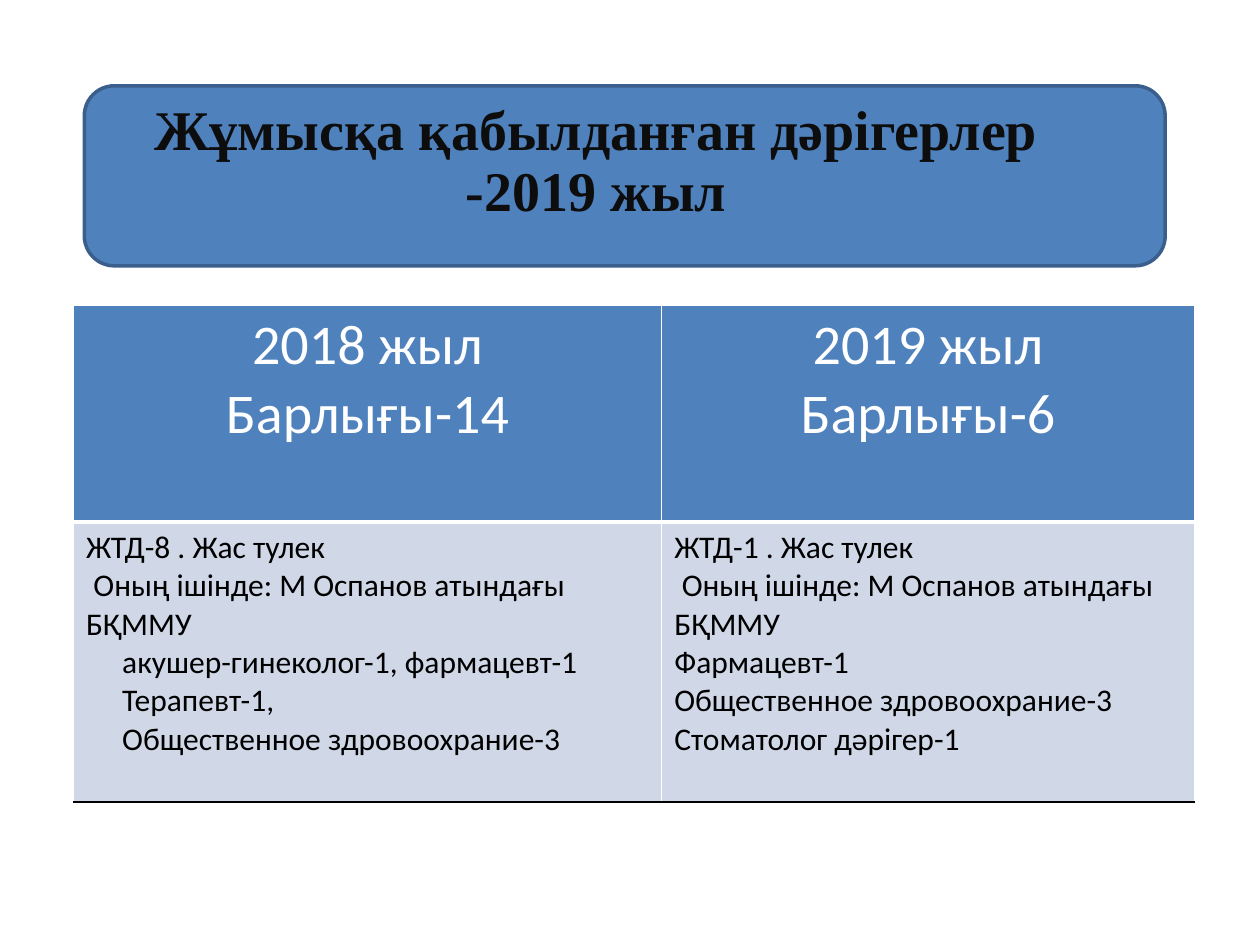
from lxml import etree
from pptx import Presentation
from pptx.dml.color import RGBColor
from pptx.enum.shapes import MSO_SHAPE
from pptx.enum.text import MSO_ANCHOR, MSO_AUTO_SIZE, PP_ALIGN
from pptx.oxml.ns import qn
from pptx.util import Cm, Pt

BLUE = RGBColor(0x4F, 0x81, 0xBD)
DARK_BLUE = RGBColor(0x3A, 0x5F, 0x8C)
PALE_BLUE = RGBColor(0xD0, 0xD8, 0xE8)
WHITE = RGBColor(0xFF, 0xFF, 0xFF)
BLACK = RGBColor(0x00, 0x00, 0x00)
NEAR_BLACK = RGBColor(0x0D, 0x0D, 0x0D)


def add_border(cell, side, color, points):
    line = etree.SubElement(cell._tc.get_or_add_tcPr(), qn(f"a:{side}"), w=str(Pt(points)))
    fill = etree.SubElement(line, qn("a:solidFill"))
    etree.SubElement(fill, qn("a:srgbClr"), val=str(color))


def add_line(frame, index, text, size, color, font="Calibri"):
    para = frame.paragraphs[0] if index == 0 else frame.add_paragraph()
    span = para.add_run()
    span.text = text
    span.font.size = Pt(size)
    span.font.name = font
    span.font.color.rgb = color
    return para


deck = Presentation()
deck.slide_width, deck.slide_height = Cm(25.4), Cm(19.05)
page = deck.slides.add_slide(deck.slide_layouts[5])

# Table of hired doctors: each line is (text, first-line indent in cm)
headers = [["2018 жыл", "Барлығы-14"], ["2019 жыл", "Барлығы-6"]]
shared_line = ("Оның ішінде: М Оспанов атындағы БҚММУ", 0.15)
details = [
    [("ЖТД-8 . Жас тулек", 0), shared_line,
     ("акушер-гинеколог-1, фармацевт-1", 0.73),
     ("Терапевт-1,", 0.73),
     ("Общественное здровоохрание-3", 0.73)],
    [("ЖТД-1 . Жас тулек", 0), shared_line,
     ("Фармацевт-1", 0),
     ("Общественное здровоохрание-3", 0),
     ("Стоматолог дәрігер-1", 0)],
]
table = page.shapes.add_table(2, 2, Cm(1.48), Cm(6.15), Cm(22.6), Cm(10.02)).table
table.first_row = table.horz_banding = False
table.columns[0].width, table.columns[1].width = Cm(11.86), Cm(10.74)
table.rows[0].height, table.rows[1].height = Cm(4.37), Cm(5.65)

for column in range(2):
    header, detail = table.cell(0, column), table.cell(1, column)
    for index, text in enumerate(headers[column]):
        para = add_line(header.text_frame, index, text, 32, WHITE)
        para.alignment = PP_ALIGN.CENTER
    for index, (text, indent) in enumerate(details[column]):
        para = add_line(detail.text_frame, index, text, 18, BLACK)
        if indent:
            properties = para._p.get_or_add_pPr()
            properties.set("marL", "0")
            properties.set("indent", str(Cm(indent)))

    # Borders come before the fill in the cell properties
    for cell, fill, top, bottom in (
        (header, BLUE, (WHITE, 1), (WHITE, 3)),
        (detail, PALE_BLUE, (WHITE, 3), (BLACK, 1)),
    ):
        add_border(cell, "lnL", WHITE, 1)
        add_border(cell, "lnR", WHITE, 1)
        add_border(cell, "lnT", *top)
        add_border(cell, "lnB", *bottom)
        cell.fill.solid()
        cell.fill.fore_color.rgb = fill

# Title banner
banner = page.shapes.add_shape(
    MSO_SHAPE.ROUNDED_RECTANGLE, Cm(1.7), Cm(1.73), Cm(21.79), Cm(3.63))
banner.shadow.inherit = False
banner.fill.solid()
banner.fill.fore_color.rgb = BLUE
banner.line.color.rgb = DARK_BLUE
banner.line.width = Pt(2)

# Title, brought in front of the banner
title = page.shapes.title
title.element.getparent().append(title.element)
title.left, title.top, title.width, title.height = Cm(2.24), Cm(2.29), Cm(19.56), Cm(2.34)
frame = title.text_frame
frame.word_wrap = True
frame.auto_size = MSO_AUTO_SIZE.NONE
frame.vertical_anchor = MSO_ANCHOR.BOTTOM
para = add_line(frame, 0, "Жұмысқа қабылданған дәрігерлер -2019 жыл",
                32, NEAR_BLACK, "Times New Roman")
para.alignment = PP_ALIGN.CENTER
para.line_spacing = 0.9
para.runs[0].font.bold = True

deck.save("out.pptx")
